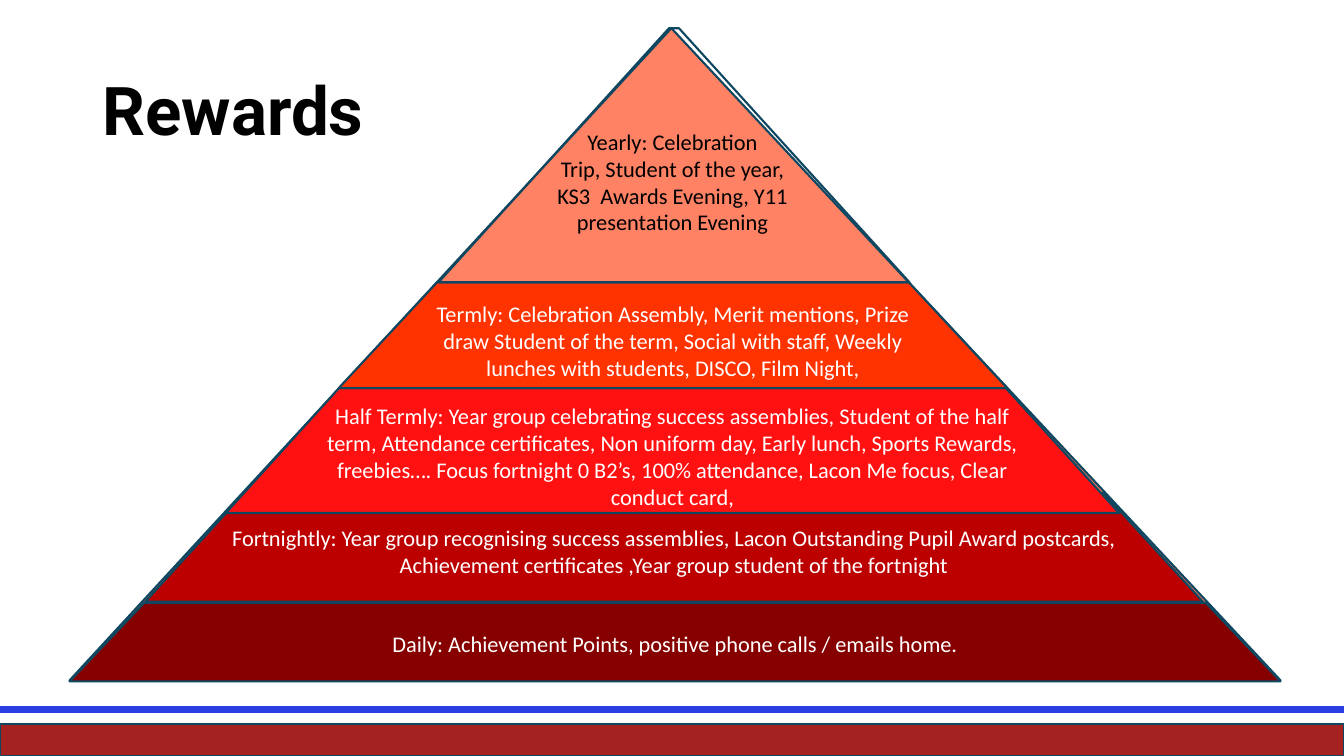
from dataclasses import dataclass

from lxml.etree import SubElement
from pptx import Presentation
from pptx.dml.color import RGBColor
from pptx.enum.shapes import MSO_CONNECTOR, MSO_SHAPE
from pptx.enum.text import MSO_ANCHOR, MSO_AUTO_SIZE, PP_ALIGN
from pptx.oxml.ns import qn
from pptx.shapes.autoshape import Shape
from pptx.slide import Slide
from pptx.util import Emu, Pt

EMU_PER_PX = 9144  # 100 px to the inch
SLIDE_WIDTH, SLIDE_HEIGHT = 1333, 750
OUTLINE = "104760"
WHITE, BLACK = "FFFFFF", "000000"


@dataclass(frozen=True)
class Box:
    left: int
    top: int
    width: int
    height: int


@dataclass(frozen=True)
class Tier:
    box: Box
    slant: float
    fill: str | None
    text: str = ""


TIERS = [
    Tier(Box(69, 598, 1201, 78), 0.95, "860000",
         "Daily: Achievement Points, positive phone calls / emails home."),
    Tier(Box(144, 489, 1049, 108), 0.912, "BC0000",
         "Fortnightly: Year group recognising success assemblies, Lacon Outstanding "
         "Pupil Award postcards, Achievement certificates ,Year group student of the "
         "fortnight"),
    Tier(Box(224, 385, 886, 124), 0.906, "FF1111",
         "Half Termly: Year group celebrating success assemblies, Student of the half "
         "term, Attendance certificates, Non uniform day, Early lunch, Sports Rewards, "
         "freebies…. Focus fortnight 0 B2’s, 100% attendance, Lacon Me focus, Clear "
         "conduct card,"),
    Tier(Box(336, 280, 663, 105), 0.93, "FF3300",
         "Termly: Celebration Assembly, Merit mentions, Prize draw Student of the term, "
         "Social with staff, Weekly lunches with students, DISCO, Film Night,"),
    Tier(Box(435, 28, 467, 252), 0.907, None),
]
YEARLY_LINES = [
    "Yearly: Celebration",
    "Trip, Student of the year,",
    "KS3  Awards Evening, Y11 presentation Evening",
]


def px(length: int) -> Emu:
    return Emu(length * EMU_PER_PX)


def place(box: Box) -> tuple[Emu, Emu, Emu, Emu]:
    return px(box.left), px(box.top), px(box.width), px(box.height)


def color(value: str) -> RGBColor:
    return RGBColor.from_string(value)


def write_text(shape: Shape, paragraphs: list[str], *, size: int = 16,
               font: str = "Calibri", fill: str = WHITE, bold: bool = False,
               align: PP_ALIGN = PP_ALIGN.CENTER,
               anchor: MSO_ANCHOR = MSO_ANCHOR.MIDDLE,
               line_spacing: float = 1.0) -> None:
    frame = shape.text_frame
    frame.word_wrap = True
    frame.vertical_anchor = anchor
    frame.text = "\n".join(paragraphs)
    for paragraph in frame.paragraphs:
        paragraph.alignment = align
        paragraph.line_spacing = line_spacing
        paragraph.font.size = Pt(size)
        paragraph.font.name = font
        paragraph.font.bold = bold
        paragraph.font.color.rgb = color(fill)


def add_outlined_shape(slide: Slide, kind: MSO_SHAPE, box: Box, fill: str | None,
                       adjustment: float | None = None) -> Shape:
    shape = slide.shapes.add_shape(kind, *place(box))
    shape.shadow.inherit = False
    if adjustment is not None:
        shape.adjustments[0] = adjustment
    if fill is None:
        shape.fill.background()
    else:
        shape.fill.solid()
        shape.fill.fore_color.rgb = color(fill)
    shape.line.color.rgb = color(OUTLINE)
    shape.line.width = Pt(1.5)
    return shape


def add_footer(slide: Slide) -> None:
    add_outlined_shape(slide, MSO_SHAPE.RECTANGLE, Box(0, 718, SLIDE_WIDTH, 32), "A42320")
    stripe = slide.shapes.add_connector(
        MSO_CONNECTOR.STRAIGHT, px(0), px(704), px(SLIDE_WIDTH), px(704))
    stripe.line.color.rgb = color("293FE2")
    stripe.line.width = Pt(5.25)
    SubElement(stripe._element.spPr, qn("a:effectLst"))


def add_title(slide: Slide) -> None:
    title = slide.shapes.add_textbox(*place(Box(92, 40, 1150, 145)))
    write_text(title, ["Rewards"], size=48, font="Roboto", fill=BLACK, bold=True,
               align=PP_ALIGN.LEFT, line_spacing=0.9)


def add_pyramid(slide: Slide) -> None:
    add_outlined_shape(slide, MSO_SHAPE.ISOSCELES_TRIANGLE, Box(69, 28, 1201, 647),
                       "FF8265", 0.497)
    for tier in TIERS:
        shape = add_outlined_shape(slide, MSO_SHAPE.TRAPEZOID, tier.box, tier.fill, tier.slant)
        if tier.text:
            write_text(shape, [tier.text])
    yearly = slide.shapes.add_textbox(*place(Box(495, 122, 344, 118)))
    write_text(yearly, YEARLY_LINES, fill=BLACK, anchor=MSO_ANCHOR.TOP)
    yearly.text_frame.auto_size = MSO_AUTO_SIZE.SHAPE_TO_FIT_TEXT


def main() -> None:
    presentation = Presentation()
    presentation.slide_width = px(SLIDE_WIDTH)
    presentation.slide_height = px(SLIDE_HEIGHT)
    slide = presentation.slides.add_slide(presentation.slide_layouts[6])
    add_footer(slide)
    add_title(slide)
    add_pyramid(slide)
    presentation.save("out.pptx")


if __name__ == "__main__":
    main()
